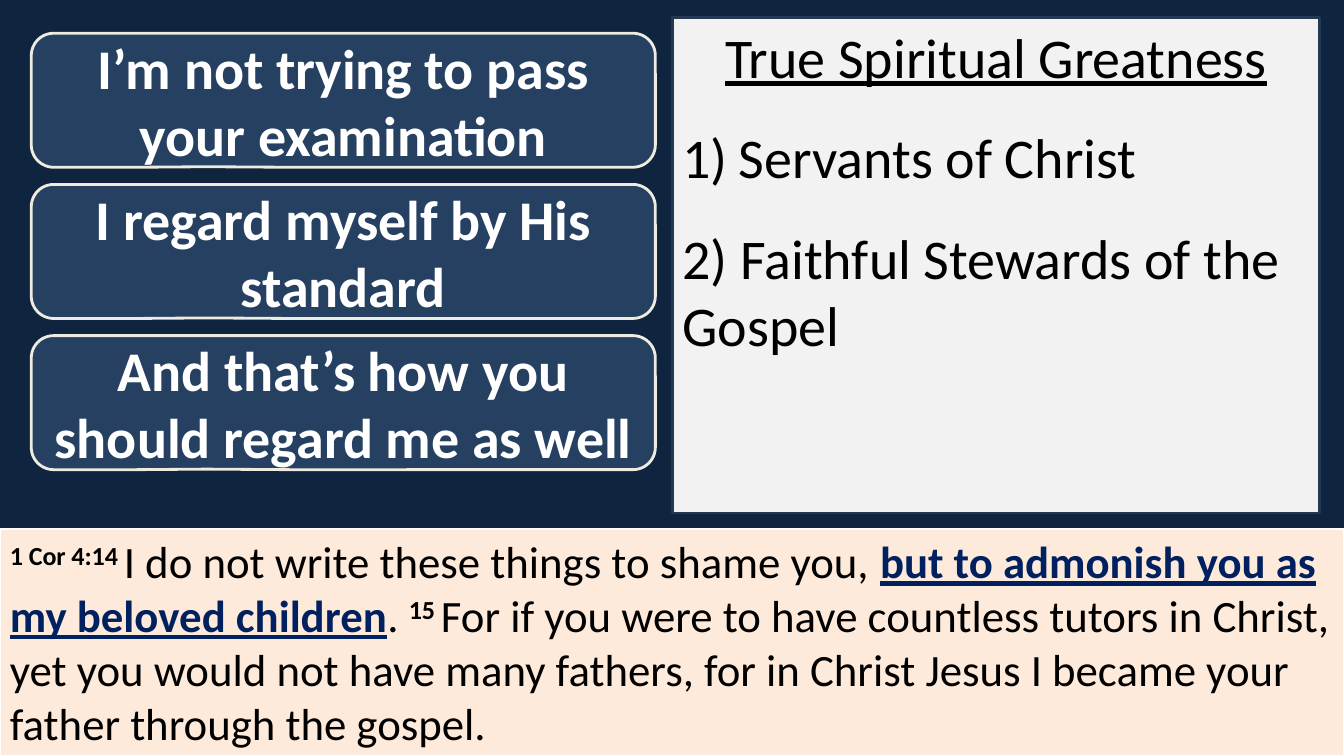
from pptx import Presentation, util as u
from pptx.dml.color import RGBColor
from pptx.enum import shapes, text
from pptx.oxml.ns import qn
from lxml import etree

NIGHT = RGBColor(0x0F, 0x24, 0x3E)
NAVY = RGBColor(0x25, 0x40, 0x61)
EDGE = RGBColor(0x23, 0x39, 0x53)
IVORY = RGBColor(0xEE, 0xEC, 0xE1)
PEACH = RGBColor(0xFD, 0xEA, 0xDA)
GRAY = RGBColor(0xF2, 0xF2, 0xF2)
WHITE = RGBColor(0xFF, 0xFF, 0xFF)
BLACK = RGBColor(0, 0, 0)
EMPHASIS = RGBColor(0, 0x20, 0x60)

STATEMENTS = [
    "I’m not trying to pass your examination",
    "I regard myself by His standard",
    "And that’s how you should regard me as well",
]
VERSE = [
    ("1 Cor 4:14 ", "number"),
    ("I do not write these things to shame you, ", "plain"),
    ("but to admonish you as my beloved children", "emphasis"),
    (". ", "plain"),
    ("15 ", "number"),
    ("For if you were to have countless tutors in Christ, yet you would not have "
     "many fathers, for in Christ Jesus I became your father through the gospel.", "plain"),
]


class SermonSlide:
    font = "Calibri"

    def __init__(self, presentation):
        self.slide = presentation.slides.add_slide(presentation.slide_layouts[6])
        fill = self.slide.background.fill
        fill.solid()
        fill.fore_color.rgb = NIGHT

    def box(self, kind, position, fill, line, width, anchor=text.MSO_ANCHOR.TOP):
        shape = self.slide.shapes.add_shape(kind, *map(u.Inches, position))
        shape.shadow.inherit = False
        shape.fill.solid()
        shape.fill.fore_color.rgb = fill
        shape.line.color.rgb = line
        shape.line.width = u.Pt(width)
        shape.text_frame.word_wrap = True
        shape.text_frame.vertical_anchor = anchor
        return shape

    def style(self, run, size, color=BLACK, bold=False, underline=False):
        run.font.name = self.font
        run.font.size = u.Pt(size)
        run.font.color.rgb = color
        run.font.bold = bold
        run.font.underline = underline

    def callout(self, position, statement):
        shape = self.box(shapes.MSO_SHAPE.ROUNDED_RECTANGULAR_CALLOUT, position,
                         NAVY, IVORY, 2, text.MSO_ANCHOR.MIDDLE)
        for index, value in enumerate((-0.219, 0.496, 0.167)):
            shape.adjustments[index] = value
        shape.text_frame.text = statement
        paragraph = shape.text_frame.paragraphs[0]
        paragraph.alignment = text.PP_ALIGN.CENTER
        self.style(paragraph.runs[0], 40, WHITE, bold=True)

    def outline(self, position, title, points):
        shape = self.box(shapes.MSO_SHAPE.RECTANGLE, position, GRAY, EDGE, 2)
        frame = shape.text_frame
        frame.text = "\n".join([title, *points])
        for index, paragraph in enumerate(frame.paragraphs):
            heading = index == 0
            paragraph.alignment = text.PP_ALIGN.CENTER if heading else text.PP_ALIGN.LEFT
            paragraph.space_before = u.Pt(0 if heading else 24)
            self.style(paragraph.runs[0], 40, underline=heading)
        self.number(frame.paragraphs[1])

    def number(self, paragraph):
        properties = paragraph._p.get_or_add_pPr()
        indent = u.Inches(0.56)
        properties.set("marL", str(indent))
        properties.set("indent", str(-indent))
        etree.SubElement(properties, qn("a:buFont"), typeface=self.font)
        etree.SubElement(properties, qn("a:buAutoNum"), type="arabicParenR")

    def scripture(self, position, passages):
        shape = self.box(shapes.MSO_SHAPE.RECTANGLE, position, PEACH, WHITE, 1.5)
        paragraph = shape.text_frame.paragraphs[0]
        paragraph.alignment = text.PP_ALIGN.LEFT
        for words, role in passages:
            run = paragraph.add_run()
            run.text = words
            emphasis = role == "emphasis"
            self.style(run, 32, EMPHASIS if emphasis else BLACK,
                       bold=role != "plain", underline=emphasis)
            if role == "number":
                run.font._element.set("baseline", "30000")


def main():
    presentation = Presentation()
    presentation.slide_width = u.Inches(13.33)
    presentation.slide_height = u.Inches(7.5)
    sermon = SermonSlide(presentation)
    sermon.scripture((0, 5.25, 13.33, 2.25), VERSE)
    sermon.outline((6.67, 0.17, 6.42, 4.92), "True Spiritual Greatness",
                   ["Servants of Christ", "2) Faithful Stewards of the Gospel"])
    for row, statement in enumerate(STATEMENTS):
        sermon.callout((0.31, 0.33 + 1.5 * row, 6.19, 1.33), statement)
    presentation.save("out.pptx")


if __name__ == "__main__":
    main()
